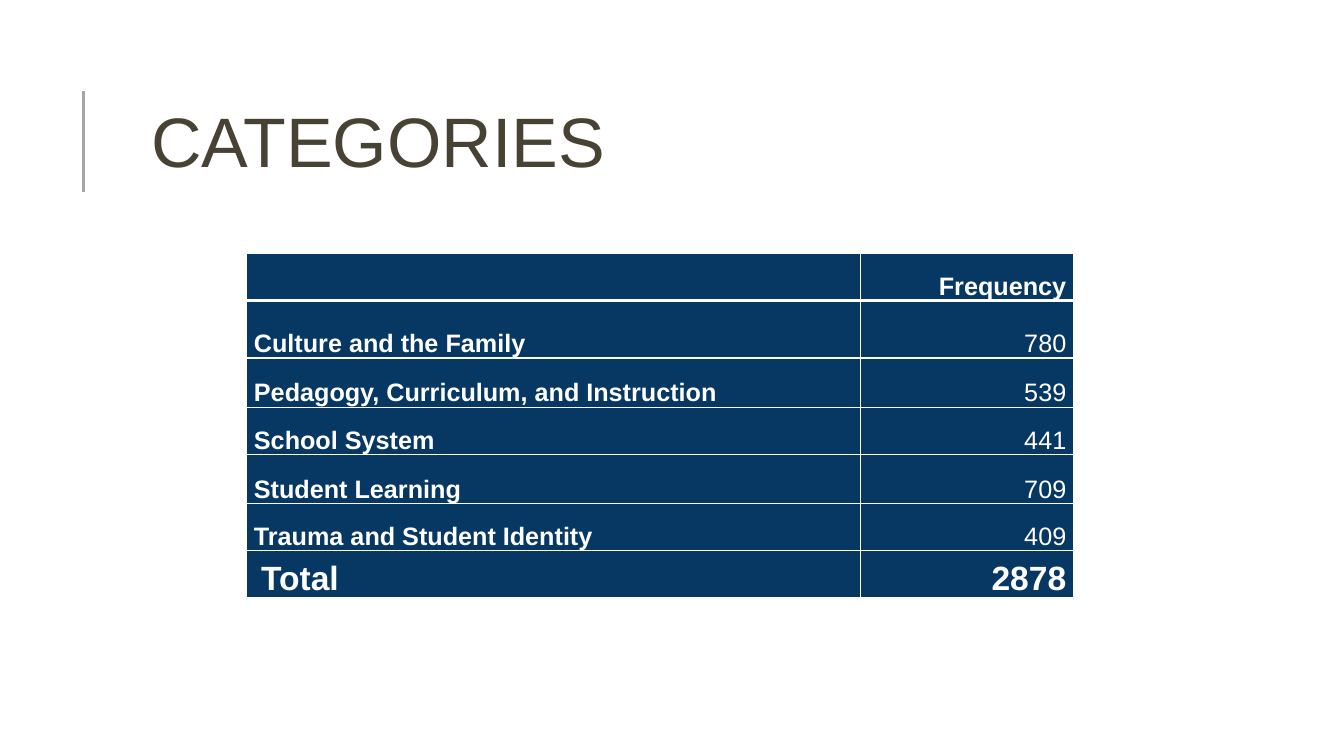
from lxml import etree
from pptx import Presentation
from pptx.dml.color import RGBColor
from pptx.enum.shapes import MSO_CONNECTOR
from pptx.enum.text import MSO_ANCHOR, PP_ALIGN
from pptx.oxml.ns import qn
from pptx.util import Cm, Pt

STRAIGHT = MSO_CONNECTOR.STRAIGHT
MIDDLE, BOTTOM = MSO_ANCHOR.MIDDLE, MSO_ANCHOR.BOTTOM
LEFT, RIGHT = PP_ALIGN.LEFT, PP_ALIGN.RIGHT

FONT = "Arial"
NAVY, WHITE, BROWN, GREY = "073763", "FFFFFF", "474233", "A6A6A6"

COLUMN_WIDTHS = [15.47, 5.36]
ROW_HEIGHTS = [1.19, 1.45, 1.24, 1.19, 1.24, 1.19, 1.19]
FREQUENCIES = [
    ("", "Frequency"),
    ("Culture and the Family", "780"),
    ("Pedagogy, Curriculum, and Instruction", "539"),
    ("School System", "441"),
    ("Student Learning", "709"),
    ("Trauma and Student Identity", "409"),
    ("Total", "2878"),
]


def color(hex_value):
    return RGBColor.from_string(hex_value)


def write_text(frame, text, size=18, fill=WHITE, bold=False, align=LEFT,
               line_spacing=1.0, tracking=None):
    para = frame.paragraphs[0]
    para.alignment = align
    para.line_spacing = line_spacing
    span = para.add_run()
    span.text = text
    span.font.name = FONT
    span.font.size = Pt(size)
    span.font.bold = bold
    span.font.color.rgb = color(fill)
    if tracking is not None:
        span.font._element.set("spc", str(tracking))


def set_borders(cell, **widths):
    """Draw white cell borders; widths are in points by side: L, R, T, B."""
    properties = cell._tc.get_or_add_tcPr()
    for side, width in widths.items():
        line = etree.SubElement(properties, qn(f"a:ln{side}"), w=str(Pt(width)))
        paint = etree.SubElement(line, qn("a:solidFill"))
        etree.SubElement(paint, qn("a:srgbClr"), val=WHITE)


def add_heading(page, left, top, width, height):
    # Title
    title = page.shapes.title
    title.left, title.top, title.width, title.height = left, top, width, height
    title.text_frame.word_wrap = True
    title.text_frame.vertical_anchor = MIDDLE
    write_text(title.text_frame, "CATEGORIES", size=50, fill=BROWN,
               line_spacing=0.8, tracking=0)

    # Vertical rule beside the title
    rule_x = left - Cm(1.45)
    rule = page.shapes.add_connector(
        STRAIGHT, rule_x, top + Cm(3.2), rule_x, top + Cm(0.66))
    rule.line.color.rgb = color(GREY)
    rule.line.width = Pt(1.75)
    etree.SubElement(rule._element.spPr, qn("a:effectLst"))


def add_frequency_table(page, left, top):
    frame = page.shapes.add_table(
        len(ROW_HEIGHTS), len(COLUMN_WIDTHS), left, top,
        Cm(sum(COLUMN_WIDTHS)), Cm(sum(ROW_HEIGHTS)))
    table = frame.table
    for column, width in zip(table.columns, COLUMN_WIDTHS):
        column.width = Cm(width)
    for row, height in zip(table.rows, ROW_HEIGHTS):
        row.height = Cm(height)

    last = len(FREQUENCIES) - 1
    for row_number, values in enumerate(FREQUENCIES):
        is_header, is_total = row_number == 0, row_number == last
        for column_number, value in enumerate(values):
            is_label = column_number == 0
            cell = table.cell(row_number, column_number)
            set_borders(cell, L=1, R=1, T=3 if row_number == 1 else 1,
                        B=3 if is_header else 1)
            cell.fill.solid()
            cell.fill.fore_color.rgb = color(NAVY)
            cell.vertical_anchor = BOTTOM
            cell.margin_left = Cm(0.36 if is_total and is_label else 0.18)
            cell.margin_right = Cm(0.18)
            cell.margin_top = cell.margin_bottom = 0
            write_text(cell.text_frame, value, size=24 if is_total else 18,
                       bold=is_label or is_header or is_total,
                       align=LEFT if is_label else RIGHT, line_spacing=1.07)


def main():
    deck = Presentation()
    deck.slide_width, deck.slide_height = Cm(33.87), Cm(19.05)
    page = deck.slides.add_slide(deck.slide_layouts[5])
    add_heading(page, Cm(3.56), Cm(1.63), Cm(27), Cm(4.17))
    add_frequency_table(page, Cm(6.22), Cm(6.38))
    deck.save("out.pptx")


if __name__ == "__main__":
    main()
